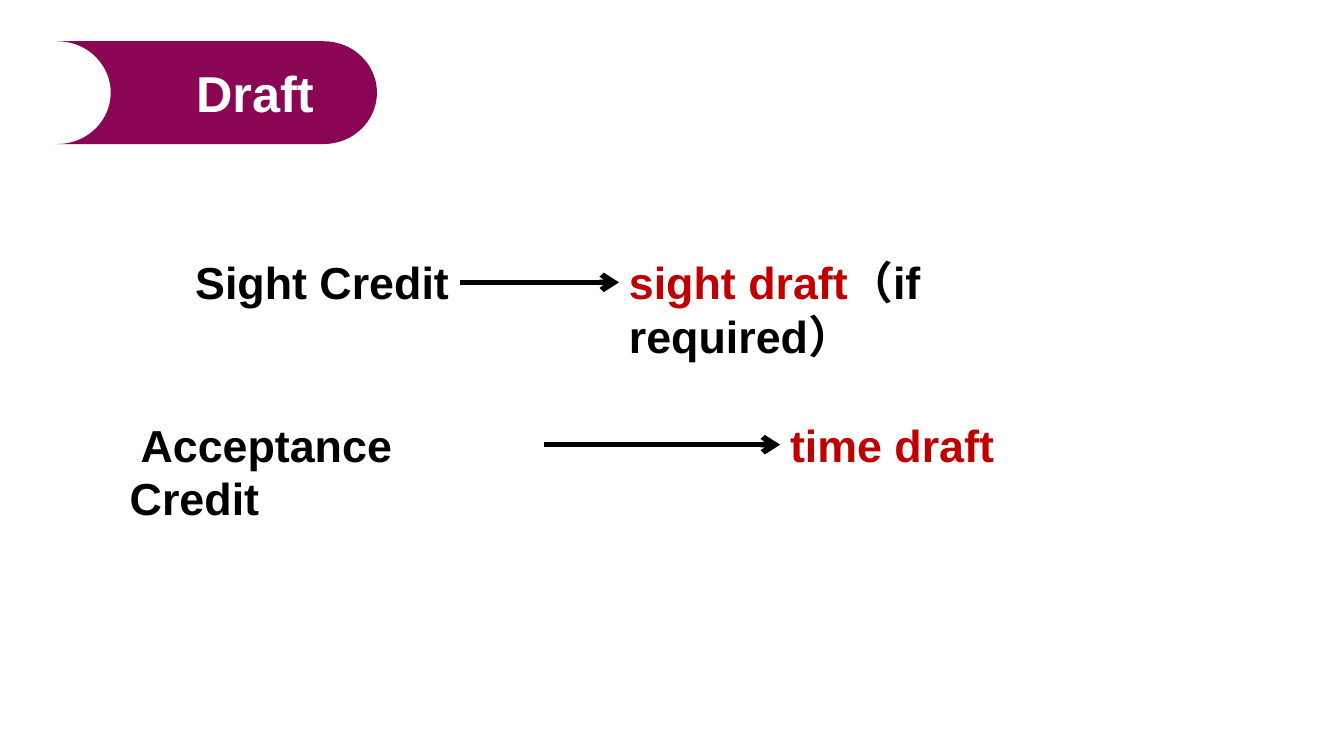
from dataclasses import dataclass

from lxml import etree
from pptx import Presentation
from pptx.dml.color import RGBColor
from pptx.enum.shapes import MSO_CONNECTOR, MSO_SHAPE
from pptx.enum.text import MSO_ANCHOR, MSO_AUTO_SIZE, PP_ALIGN
from pptx.oxml.ns import qn
from pptx.util import Cm, Pt

STRAIGHT = MSO_CONNECTOR.STRAIGHT
TITLE_SHAPE = MSO_SHAPE.FLOWCHART_STORED_DATA
MIDDLE, TOP = MSO_ANCHOR.MIDDLE, MSO_ANCHOR.TOP
RIGHT = PP_ALIGN.RIGHT
NO_AUTOFIT = MSO_AUTO_SIZE.NONE
LEFT_SIDE, RIGHT_SIDE = 1, 3


@dataclass(frozen=True)
class Theme:
    font: str = "Arial"
    banner: RGBColor = RGBColor(0x8A, 0x05, 0x54)
    light: RGBColor = RGBColor(0xFF, 0xFF, 0xFF)
    dark: RGBColor = RGBColor(0, 0, 0)
    accent: RGBColor = RGBColor(0xC0, 0, 0)
    title_size: Pt = Pt(36)
    body_size: Pt = Pt(32)
    arrow_width: Pt = Pt(4)


THEME = Theme()
TERM_HEIGHT = 1.63


def set_all(target, values):
    for name, value in values.items():
        setattr(target, name, value)


def add_run(paragraph, text, size, color):
    run = paragraph.add_run()
    run.text = text
    set_all(run.font, {"name": THEME.font, "size": size, "bold": True})
    run.font.color.rgb = color


def add_title(slide, text):
    shape = slide.shapes.add_shape(TITLE_SHAPE, Cm(1.45), Cm(1.04), Cm(8.05), Cm(2.59))
    shape.shadow.inherit = False
    shape.fill.solid()
    shape.fill.fore_color.rgb = THEME.banner
    shape.line.fill.background()
    shape._element.spPr.find(qn("a:xfrm")).set("flipH", "1")
    shape.text_frame.vertical_anchor = MIDDLE
    paragraph = shape.text_frame.paragraphs[0]
    paragraph.alignment = RIGHT
    add_run(paragraph, text, THEME.title_size, THEME.light)


def add_term(slide, left, top, width, runs, wrap=False):
    box = slide.shapes.add_textbox(Cm(left), Cm(top), Cm(width), Cm(TERM_HEIGHT))
    set_all(box.text_frame, {
        "word_wrap": wrap,
        "auto_size": NO_AUTOFIT,
        "vertical_anchor": TOP,
        "margin_right": Cm(0.4 if wrap else 0.25),
    })
    for text, color in runs:
        add_run(box.text_frame.paragraphs[0], text, THEME.body_size, color)
    return box


def add_arrow(slide, source, target):
    """Join the right side of source to the left side of target."""
    arrow = slide.shapes.add_connector(STRAIGHT, 0, 0, 0, 0)
    arrow.begin_connect(source, RIGHT_SIDE)
    arrow.end_connect(target, LEFT_SIDE)
    arrow.line.color.rgb = THEME.dark
    arrow.line.width = THEME.arrow_width
    etree.SubElement(arrow.line._get_or_add_ln(), qn("a:tailEnd"), type="arrow")
    etree.SubElement(arrow._element.spPr, qn("a:effectLst"))


def main():
    presentation = Presentation()
    presentation.slide_width, presentation.slide_height = Cm(33.87), Cm(19.05)
    slide = presentation.slides.add_slide(presentation.slide_layouts[6])

    add_title(slide, "Draft")
    sight_top, acceptance_top = 6.3, 10.39
    sight_credit = add_term(slide, 4.67, sight_top, 6.91, [("Sight Credit", THEME.dark)])
    sight_draft = add_term(
        slide, 15.6, sight_top, 13.82,
        [("sight draft", THEME.accent), ("（if required）", THEME.dark)], wrap=True)
    acceptance_credit = add_term(
        slide, 3.02, acceptance_top, 10.69, [(" Acceptance Credit", THEME.dark)], wrap=True)
    time_draft = add_term(slide, 19.66, acceptance_top, 5.66, [("time draft", THEME.accent)])

    add_arrow(slide, sight_credit, sight_draft)
    add_arrow(slide, acceptance_credit, time_draft)
    presentation.save("out.pptx")


if __name__ == "__main__":
    main()
